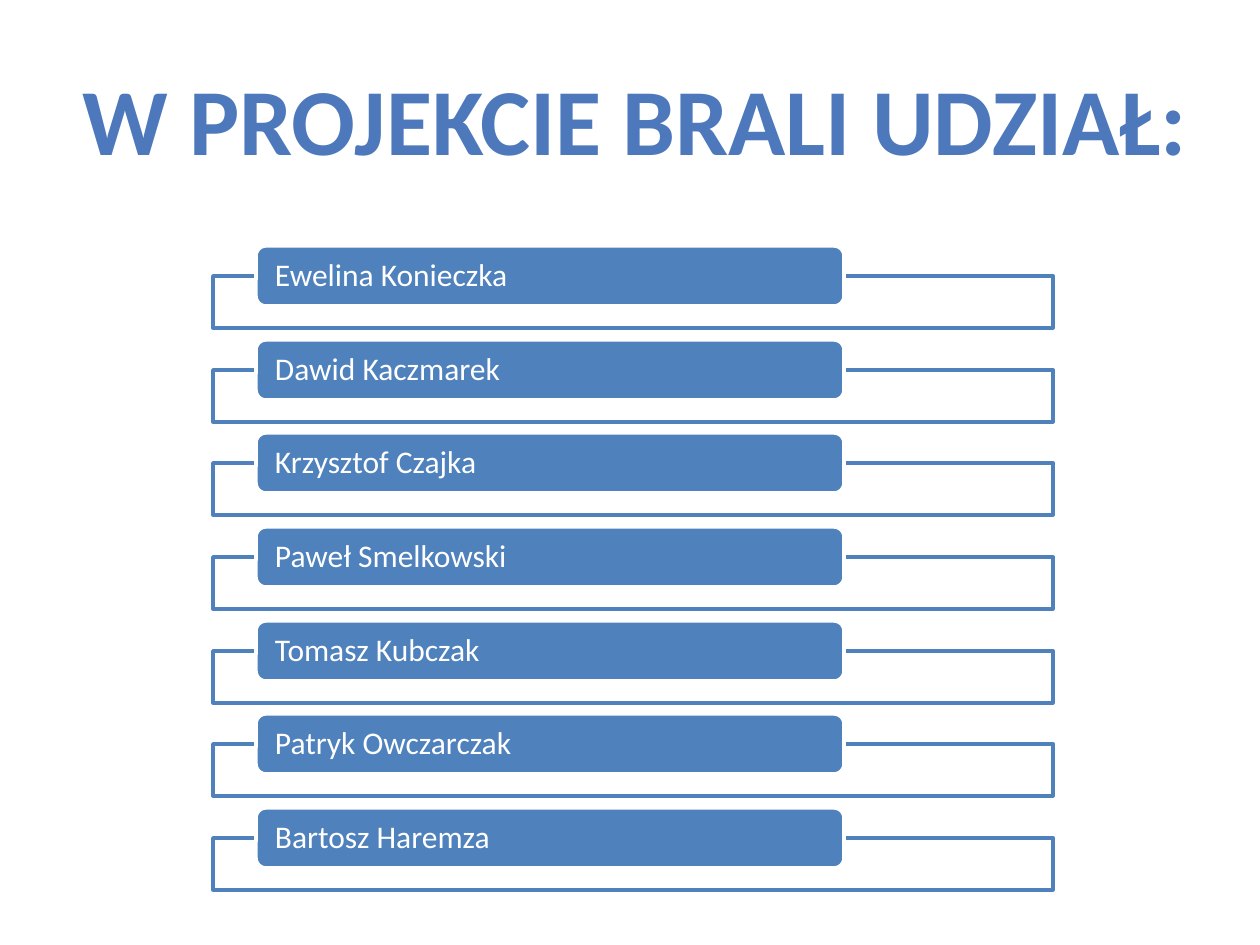
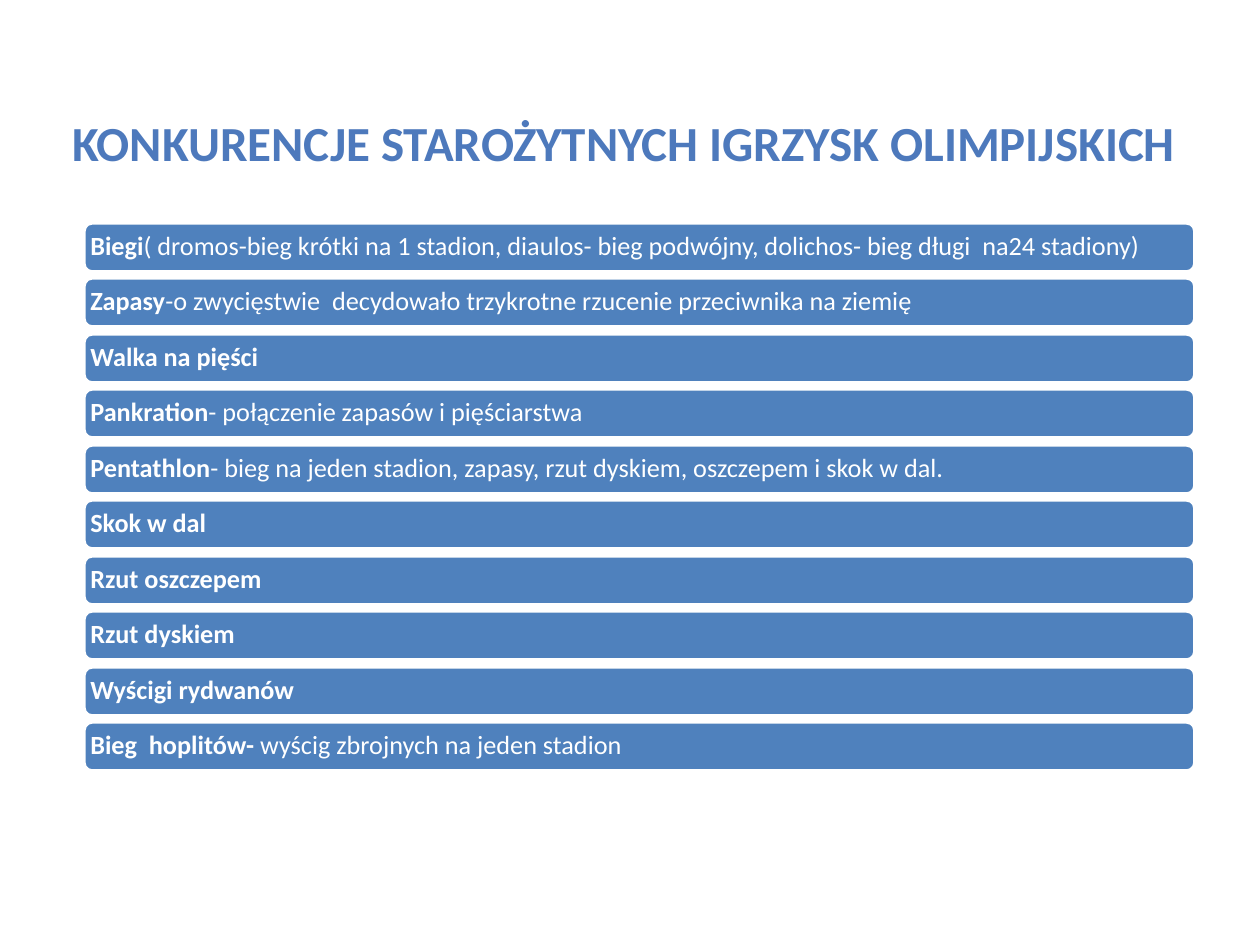
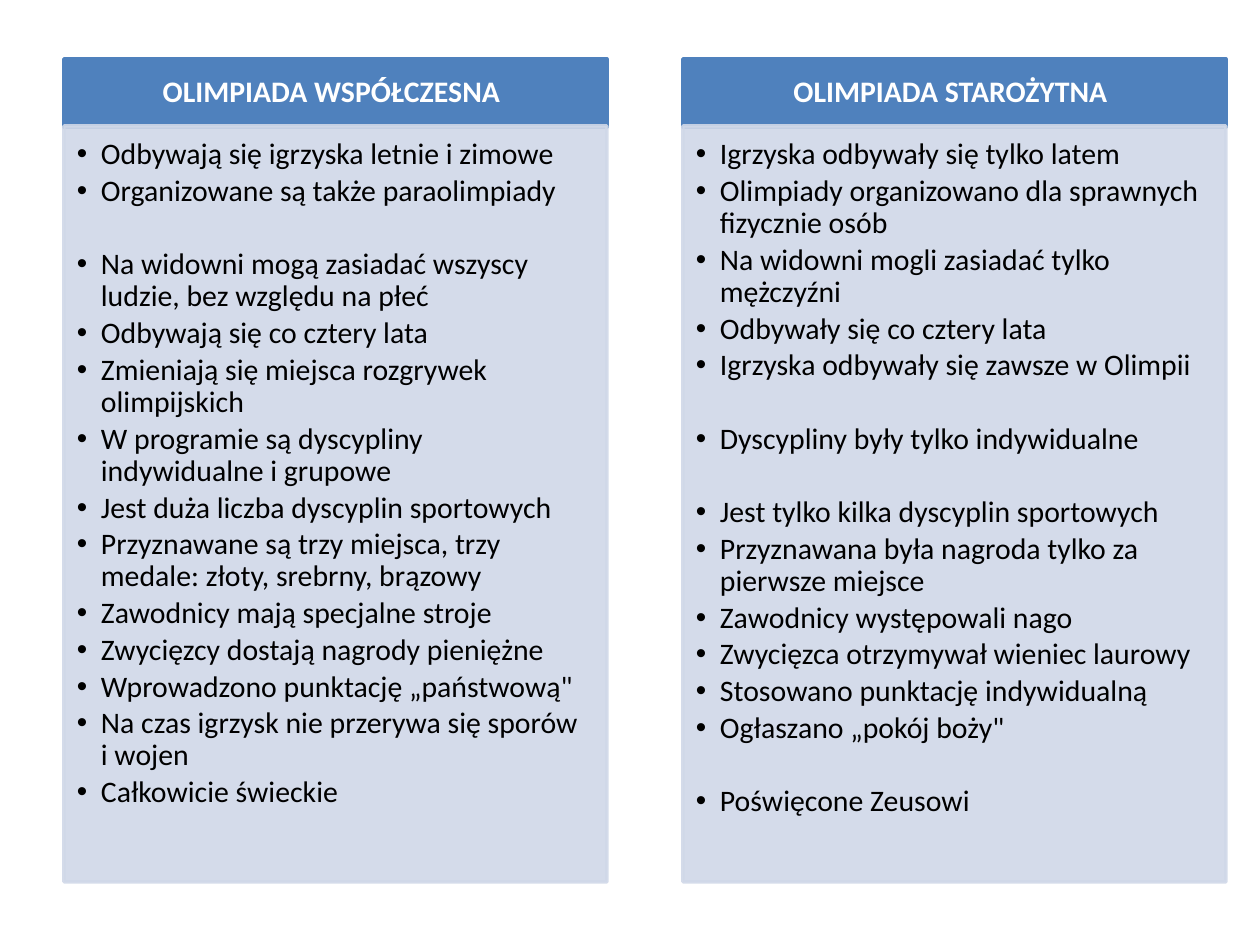
from dataclasses import dataclass

from lxml.etree import SubElement
from pptx import Presentation
from pptx.dml.color import RGBColor
from pptx.enum.shapes import MSO_SHAPE
from pptx.enum.text import MSO_ANCHOR, MSO_AUTO_SIZE, PP_ALIGN
from pptx.oxml.ns import qn
from pptx.util import Emu, Pt

PX_PER_INCH = 126
FONT = "Calibri"
COLORS = {
    "blue": "4F81BD",
    "pale": "D0D8E8",
    "white": "FFFFFF",
    "black": "000000",
}
# Title gradient: position in percent -> colour
TITLE_STOPS = {0: "7494C9", 49: "4D79BC", 50: "346AAA", 92: "325F94", 100: "315D91"}
ITEM_GAP = 2.6
EMPTY_LINE = 21.0
BULLET_INDENT = 24


@dataclass(frozen=True)
class Area:
    left: int
    top: int
    width: int
    height: int


@dataclass(frozen=True)
class Look:
    kind: MSO_SHAPE
    fill: str
    line: str
    opacity: int = 100


@dataclass(frozen=True)
class TextStyle:
    size: int
    color: str
    insets: tuple[int, int, int, int]
    align: PP_ALIGN = PP_ALIGN.LEFT
    anchor: MSO_ANCHOR = MSO_ANCHOR.MIDDLE


@dataclass(frozen=True)
class Contest:
    name: str
    detail: str = ""


@dataclass(frozen=True)
class Panel:
    left: int
    heading: str
    items: list[str]
    wide_after: tuple[int, ...]  # items followed by an extra line of space


FRAME = Look(MSO_SHAPE.RECTANGLE, "white", "blue", 90)
PILL = Look(MSO_SHAPE.ROUNDED_RECTANGLE, "blue", "white")
HEADER = Look(MSO_SHAPE.RECTANGLE, "blue", "blue")
BODY = Look(MSO_SHAPE.RECTANGLE, "pale", "pale", 90)

NAME_TEXT = TextStyle(18, "white", (16, 0, 16, 0))
CONTEST_TEXT = TextStyle(15, "white", (4, 8, 4, 8))
HEADER_TEXT = TextStyle(17, "white", (16, 10, 24, 10), PP_ALIGN.CENTER)
BODY_TEXT = TextStyle(17, "black", (13, 13, 16, 19), anchor=MSO_ANCHOR.TOP)

PEOPLE = [
    "Ewelina Konieczka",
    "Dawid Kaczmarek",
    "Krzysztof Czajka",
    "Paweł Smelkowski",
    "Tomasz Kubczak",
    "Patryk Owczarczak",
    "Bartosz Haremza",
]

CONTESTS = [
    Contest("Biegi", "( dromos-bieg krótki na 1 stadion, diaulos- bieg podwójny, "
                     "dolichos- bieg długi  na24 stadiony)"),
    Contest("Zapasy", "-o zwycięstwie  decydowało trzykrotne rzucenie przeciwnika na ziemię"),
    Contest("Walka na pięści"),
    Contest("Pankration", "- połączenie zapasów i pięściarstwa"),
    Contest("Pentathlon", "- bieg na jeden stadion, zapasy, rzut dyskiem, oszczepem i skok w dal."),
    Contest("Skok w dal"),
    Contest("Rzut oszczepem"),
    Contest("Rzut dyskiem"),
    Contest("Wyścigi rydwanów"),
    Contest("Bieg  hoplitów- ", "wyścig zbrojnych na jeden stadion"),
]

PANELS = [
    Panel(64, "OLIMPIADA WSPÓŁCZESNA", [
        "Odbywają się igrzyska letnie i zimowe",
        "Organizowane są także paraolimpiady",
        "Na widowni mogą zasiadać wszyscy ludzie, bez względu na płeć",
        "Odbywają się co cztery lata",
        "Zmieniają się miejsca rozgrywek olimpijskich",
        "W programie są dyscypliny indywidualne i grupowe",
        "Jest duża liczba dyscyplin sportowych",
        "Przyznawane są trzy miejsca, trzy medale: złoty, srebrny, brązowy",
        "Zawodnicy mają specjalne stroje",
        "Zwycięzcy dostają nagrody pieniężne",
        "Wprowadzono punktację „państwową\"",
        "Na czas igrzysk nie przerywa się sporów i wojen",
        "Całkowicie świeckie",
    ], (1,)),
    Panel(683, "OLIMPIADA STAROŻYTNA", [
        "Igrzyska odbywały się tylko latem",
        "Olimpiady organizowano dla sprawnych fizycznie osób",
        "Na widowni mogli zasiadać tylko mężczyźni",
        "Odbywały się co cztery lata",
        "Igrzyska odbywały się zawsze w Olimpii",
        "Dyscypliny były tylko indywidualne",
        "Jest tylko kilka dyscyplin sportowych",
        "Przyznawana była nagroda tylko za pierwsze miejsce",
        "Zawodnicy występowali nago",
        "Zwycięzca otrzymywał wieniec laurowy",
        "Stosowano punktację indywidualną",
        "Ogłaszano „pokój boży\"",
        "Poświęcone Zeusowi",
    ], (4, 5, 11)),
]


def px(length: int) -> Emu:
    return Emu(round(length * 914400 / PX_PER_INCH))


def spread(first: int, last: int, count: int) -> list[int]:
    """Evenly spaced positions from first to last."""
    return [round(first + (last - first) * i / (count - 1)) for i in range(count)]


def place(area: Area) -> list[Emu]:
    return [px(n) for n in (area.left, area.top, area.width, area.height)]


def paint(fill, color: str, opacity: int) -> None:
    fill.solid()
    fill.fore_color.rgb = RGBColor.from_string(COLORS[color])
    if opacity < 100:
        for value in fill._xPr.iter(qn("a:srgbClr")):
            if value.find(qn("a:alpha")) is None:
                SubElement(value, qn("a:alpha"), val=str(opacity * 1000))


def add_box(page, area: Area, look: Look):
    box = page.shapes.add_shape(look.kind, *place(area))
    box.shadow.inherit = False
    paint(box.fill, look.fill, look.opacity)
    line_opacity = look.opacity if look.line == look.fill else 100
    paint(box.line.fill, look.line, line_opacity)
    box.line.width = Pt(2)
    return box


def write(box, text: str, style: TextStyle):
    """Put the text in the box, one paragraph per line, and style it."""
    frame = box.text_frame
    frame.text = text
    frame.word_wrap = True
    frame.vertical_anchor = style.anchor
    (frame.margin_left, frame.margin_top,
     frame.margin_right, frame.margin_bottom) = [px(n) for n in style.insets]
    for para in frame.paragraphs:
        para.alignment = style.align
        para.line_spacing = 0.9
        for span in para.runs:
            style_span(span, style)
    return frame


def style_span(span, style: TextStyle, bold: bool = False) -> None:
    span.font.name = FONT
    span.font.size = Pt(style.size)
    span.font.bold = bold
    span.font.color.rgb = RGBColor.from_string(COLORS[style.color])


def add_title(page, area: Area, text: str, size: int) -> None:
    frame = page.shapes.add_textbox(*place(area)).text_frame
    frame.text = text
    frame.word_wrap = False
    frame.auto_size = MSO_AUTO_SIZE.SHAPE_TO_FIT_TEXT
    para = frame.paragraphs[0]
    para.alignment = PP_ALIGN.CENTER
    span = para.runs[0]
    span.font.size = Pt(size)
    span.font.bold = True
    span.font.name = FONT
    # Vertical gradient
    span.font.fill.gradient()
    span.font.fill.gradient_angle = 270
    stops = next(span._r.iter(qn("a:gsLst")))
    for stop in list(stops):
        stops.remove(stop)
    for position, color in TITLE_STOPS.items():
        stop = SubElement(stops, qn("a:gs"), pos=str(position * 1000))
        SubElement(stop, qn("a:srgbClr"), val=color)


def add_bullet(para) -> None:
    properties = para._p.get_or_add_pPr()
    properties.set("marL", str(px(BULLET_INDENT)))
    properties.set("indent", str(-px(BULLET_INDENT)))
    SubElement(properties, qn("a:buFont"), typeface="Arial")
    SubElement(properties, qn("a:buChar"), char="•")


def build_people(page) -> None:
    for name, top in zip(PEOPLE, spread(246, 808, len(PEOPLE))):
        add_box(page, Area(213, top + 30, 840, 52), FRAME)
        write(add_box(page, Area(256, top, 588, 60), PILL), name, NAME_TEXT)
    add_title(page, Area(64, 55, 1142, 127), "W PROJEKCIE BRALI UDZIAŁ:", 54)


def build_contests(page) -> None:
    add_title(page, Area(47, 106, 1153, 72),
              "KONKURENCJE STAROŻYTNYCH IGRZYSK OLIMPIJSKICH", 28)
    for contest, top in zip(CONTESTS, spread(223, 722, len(CONTESTS))):
        bar = add_box(page, Area(84, top, 1111, 49), PILL)
        para = write(bar, contest.name, CONTEST_TEXT).paragraphs[0]
        para.runs[0].font.bold = True
        if contest.detail:
            span = para.add_run()
            span.text = contest.detail
            style_span(span, CONTEST_TEXT)


def build_comparison(page) -> None:
    for panel in PANELS:
        header = add_box(page, Area(panel.left, 59, 543, 68), HEADER)
        heading = write(header, panel.heading, HEADER_TEXT)
        heading.paragraphs[0].runs[0].font.bold = True

        body = add_box(page, Area(panel.left, 126, 543, 756), BODY)
        frame = write(body, "\n".join(panel.items), BODY_TEXT)
        for index, para in enumerate(frame.paragraphs):
            extra = EMPTY_LINE if index in panel.wide_after else 0
            para.space_after = Pt(ITEM_GAP + extra)
            add_bullet(para)


def main() -> None:
    deck = Presentation()
    deck.slide_width, deck.slide_height = px(1260), px(945)
    for build in (build_people, build_contests, build_comparison):
        build(deck.slides.add_slide(deck.slide_layouts[6]))
    deck.save("out.pptx")


if __name__ == "__main__":
    main()
